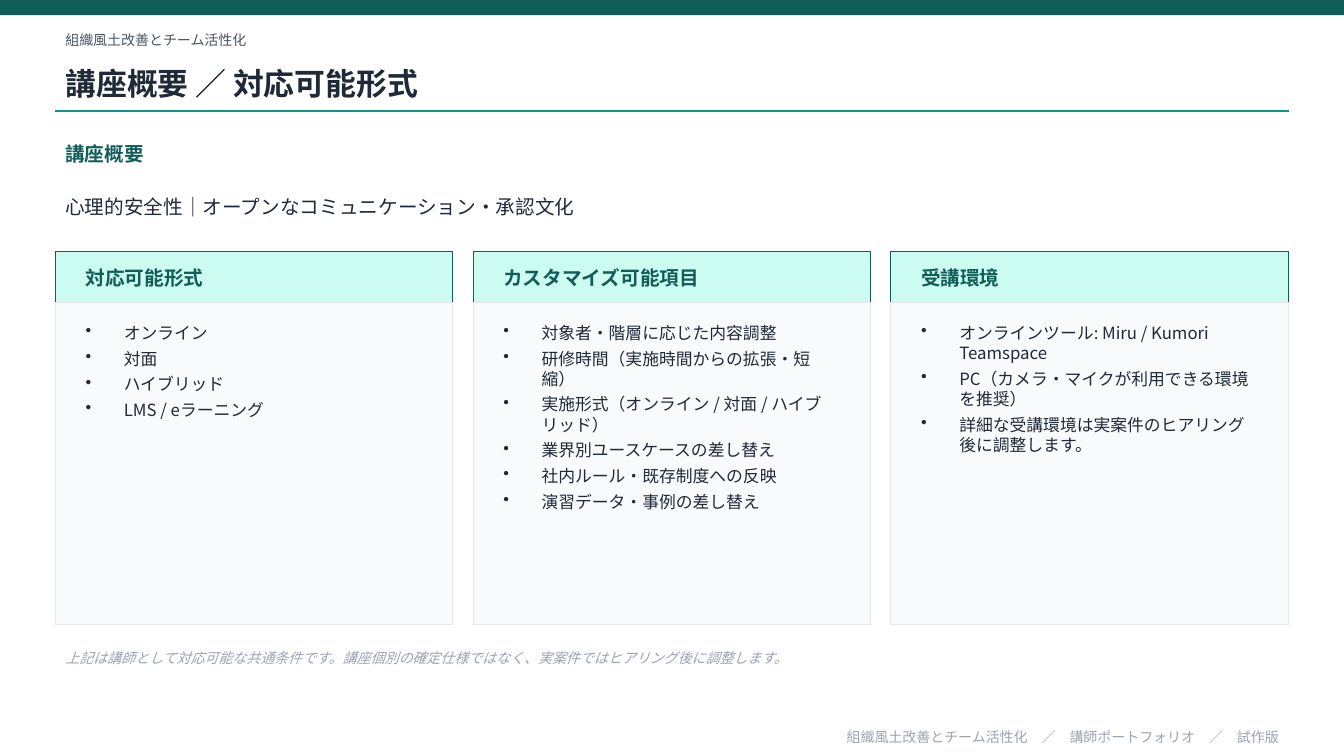
from lxml import etree
from pptx import Presentation
from pptx.dml.color import RGBColor
from pptx.enum import shapes, text
from pptx.oxml import ns
from pptx.util import Inches, Pt

FONT = "Noto Sans CJK JP"
DARK_TEAL, TEAL, MINT = "115E59", "0D9488", "CCFBF1"
INK, SLATE, MUTED = "1F2937", "4B5563", "9CA3AF"
PANEL, PANEL_EDGE = "F9FAFB", "E5E7EB"

LEFT, WIDTH = 0.55, 12.23
CARD_GAP, CARD_PAD = 0.2, 0.2
CARD_TOP, HEAD_HEIGHT, BODY_HEIGHT = 2.5, 0.5, 3.2

CARDS = [
    ("対応可能形式", ["オンライン", "対面", "ハイブリッド", "LMS / eラーニング"]),
    ("カスタマイズ可能項目", [
        "対象者・階層に応じた内容調整",
        "研修時間（実施時間からの拡張・短縮）",
        "実施形式（オンライン / 対面 / ハイブリッド）",
        "業界別ユースケースの差し替え",
        "社内ルール・既存制度への反映",
        "演習データ・事例の差し替え",
    ]),
    ("受講環境", [
        "オンラインツール: Miru / Kumori Teamspace",
        "PC（カメラ・マイクが利用できる環境を推奨）",
        "詳細な受講環境は実案件のヒアリング後に調整します。",
    ]),
]


def color(hex_string):
    return RGBColor.from_string(hex_string)


def add_bullet(paragraph):
    properties = paragraph._p.get_or_add_pPr()
    properties.set("marL", str(Inches(0.38)))
    properties.set("indent", str(-Inches(0.38)))
    etree.SubElement(properties, ns.qn("a:buChar")).set("char", "•")
    paragraph.space_after = Pt(4)


def write(frame, content, size=14, ink=INK, bold=False, italic=False,
          align=text.PP_ALIGN.LEFT, anchor=text.MSO_ANCHOR.MIDDLE, bullets=False):
    """Fill a text frame with one paragraph per line of content."""
    frame.word_wrap = True
    frame.auto_size = text.MSO_AUTO_SIZE.NONE
    frame.vertical_anchor = anchor
    for index, line in enumerate(content.split("\n")):
        paragraph = frame.add_paragraph() if index else frame.paragraphs[0]
        paragraph.alignment = align
        if bullets:
            add_bullet(paragraph)
        run = paragraph.add_run()
        run.text = line
        font = run.font
        font.size, font.bold, font.italic = Pt(size), bold, italic
        font.color.rgb = color(ink)
        font.name = FONT
        east_asian = etree.SubElement(run._r.get_or_add_rPr(), ns.qn("a:ea"))
        east_asian.set("typeface", FONT)


def add_text(slide, content, left, top, width, height, **style):
    box = slide.shapes.add_textbox(
        Inches(left), Inches(top), Inches(width), Inches(height))
    write(box.text_frame, content, **style)


def add_rect(slide, left, top, width, height, fill, edge=None):
    rect = slide.shapes.add_shape(
        shapes.MSO_SHAPE.RECTANGLE,
        Inches(left), Inches(top), Inches(width), Inches(height))
    rect.shadow.inherit = False
    rect.fill.solid()
    rect.fill.fore_color.rgb = color(fill)
    if edge:
        rect.line.color.rgb = color(edge)
        rect.line.width = Pt(0.75)
    else:
        rect.line.fill.background()


def add_title(slide, content):
    title = slide.shapes.title
    title.left, title.top = Inches(LEFT), Inches(0.55)
    title.width, title.height = Inches(WIDTH), Inches(0.55)
    write(title.text_frame, content, size=22, bold=True)


def add_rule(slide, top):
    rule = slide.shapes.add_connector(
        shapes.MSO_CONNECTOR.STRAIGHT,
        Inches(LEFT), Inches(top), Inches(LEFT + WIDTH), Inches(top))
    rule.line.color.rgb = color(TEAL)
    rule.line.width = Pt(1)
    etree.SubElement(rule._element.spPr, ns.qn("a:effectLst"))


def add_card(slide, left, width, heading, items):
    body_top = CARD_TOP + HEAD_HEIGHT
    text_left, text_width = left + CARD_PAD, width - 2 * CARD_PAD
    add_rect(slide, left, CARD_TOP, width, HEAD_HEIGHT, MINT, DARK_TEAL)
    add_text(slide, heading, text_left, CARD_TOP, text_width, HEAD_HEIGHT,
             ink=DARK_TEAL, bold=True)
    add_rect(slide, left, body_top, width, BODY_HEIGHT, PANEL, PANEL_EDGE)
    add_text(slide, "\n".join(items), text_left, body_top + 0.15, text_width,
             BODY_HEIGHT - 0.35, size=12, anchor=text.MSO_ANCHOR.TOP, bullets=True)


def main():
    deck = Presentation()
    deck.slide_width, deck.slide_height = Inches(13.33), Inches(7.5)
    slide = deck.slides.add_slide(deck.slide_layouts[5])

    add_rect(slide, 0, 0, 13.33, 0.15, DARK_TEAL)
    add_text(slide, "組織風土改善とチーム活性化", LEFT, 0.25, WIDTH, 0.3,
             size=10, ink=SLATE)
    add_title(slide, "講座概要 ／ 対応可能形式")
    add_rule(slide, 1.1)
    add_text(slide, "講座概要", LEFT, 1.35, WIDTH, 0.35, ink=DARK_TEAL, bold=True)
    add_text(slide, "心理的安全性｜オープンなコミュニケーション・承認文化",
             LEFT, 1.75, WIDTH, 0.6)

    card_width = (WIDTH - CARD_GAP * (len(CARDS) - 1)) / len(CARDS)
    for index, (heading, items) in enumerate(CARDS):
        add_card(slide, LEFT + index * (card_width + CARD_GAP), card_width,
                 heading, items)

    add_text(slide, "上記は講師として対応可能な共通条件です。講座個別の確定仕様ではなく、"
             "実案件ではヒアリング後に調整します。",
             LEFT, 6.35, WIDTH, 0.35, size=10, ink=MUTED, italic=True)
    add_text(slide, "組織風土改善とチーム活性化　／　講師ポートフォリオ　／　試作版",
             LEFT, 7.2, WIDTH, 0.22, size=10, ink=MUTED, align=text.PP_ALIGN.RIGHT)
    deck.save("out.pptx")


if __name__ == "__main__":
    main()
